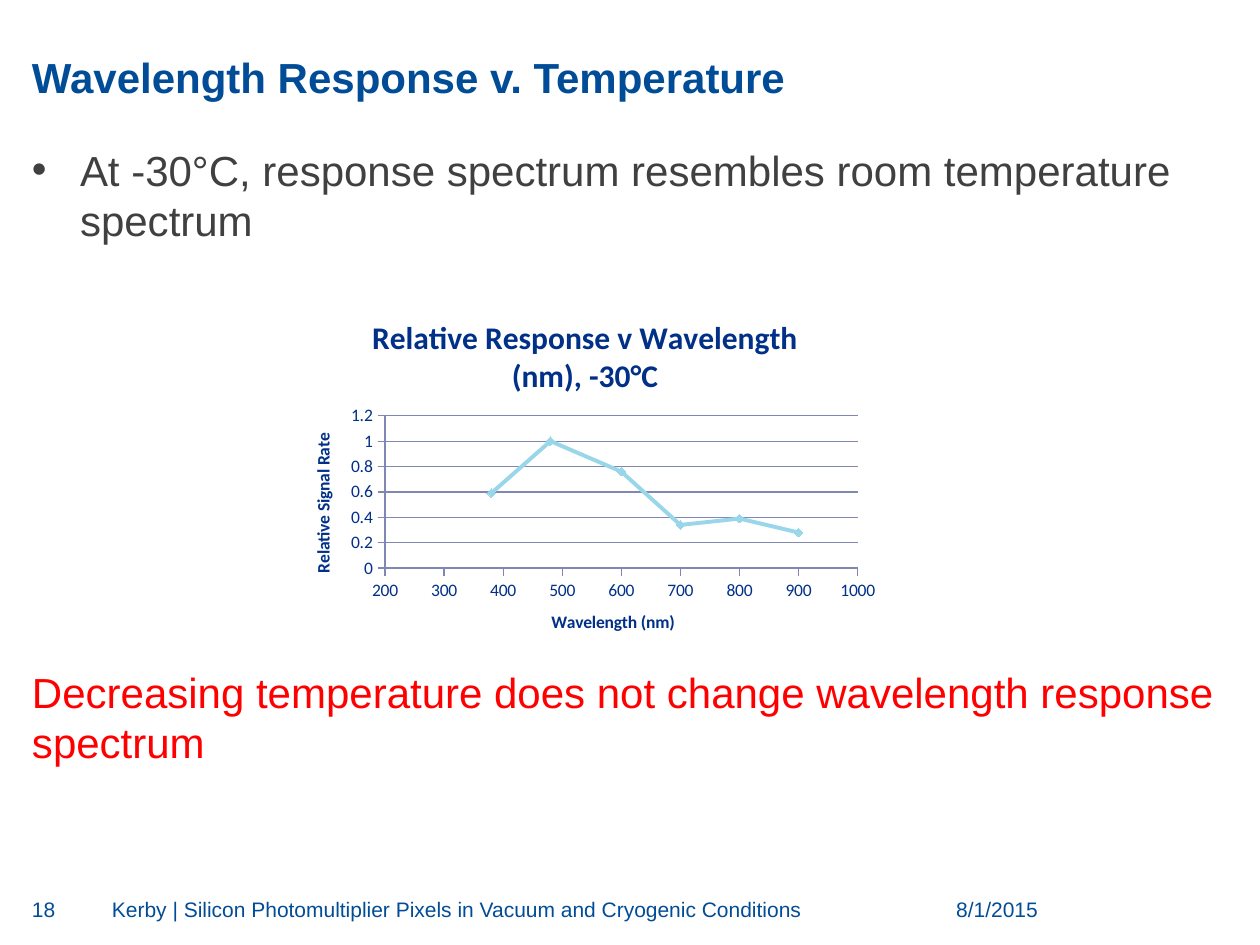
from lxml import etree
from pptx import Presentation
from pptx.chart.data import XyChartData
from pptx.dml.color import RGBColor
from pptx.enum.chart import XL_CHART_TYPE as CT, XL_MARKER_STYLE as MS, XL_TICK_MARK as TM
from pptx.enum.text import MSO_ANCHOR as ANCHOR, MSO_AUTO_SIZE as AUTO, PP_ALIGN as ALIGN
from pptx.oxml import parse_xml
from pptx.oxml.ns import nsdecls, qn
from pptx.util import Pt

PX = 914400 / 126
BLUE, NAVY, GRAY, RED = "004C97", "003087", "404040", "FF0000"
GRID, LINE = "7F87B2", "99D6EA"


def px(n):
    return round(n * PX)


def rgb(h):
    return RGBColor.from_string(h)


def place(sp, box):
    sp.left, sp.top, sp.width, sp.height = map(px, box)


def set_font(font, size, color, bold=False, name="Arial"):
    font.name, font.size, font.bold = name, Pt(size), bold
    font.color.rgb = rgb(color)


def set_frame(sp, anchor=ANCHOR.TOP):
    tf = sp.text_frame
    tf.margin_left = tf.margin_top = tf.margin_right = tf.margin_bottom = 0
    tf.word_wrap, tf.auto_size, tf.vertical_anchor = True, AUTO.NONE, anchor
    return tf


def add_run(p, text, size, color, bold=False):
    r = p.add_run()
    r.text = text
    set_font(r.font, size, color, bold)


def set_bullet(p, indent, char=None):
    pPr = p._p.get_or_add_pPr()
    pPr.set("marL", str(px(indent)))
    pPr.set("indent", str(-px(indent)))
    if char:
        etree.SubElement(pPr, qn("a:buFont")).set("typeface", "Arial")
        etree.SubElement(pPr, qn("a:buChar")).set("char", char)
    else:
        etree.SubElement(pPr, qn("a:buNone"))


def fill_title(sp, box):
    place(sp, box)
    p = set_frame(sp, ANCHOR.BOTTOM).paragraphs[0]
    p.alignment = ALIGN.LEFT
    add_run(p, "Wavelength Response v. Temperature", 24, BLUE, True)


def fill_body(sp, box):
    place(sp, box)
    tf = set_frame(sp)
    p = tf.paragraphs[0]
    p.space_before = Pt(0)
    set_bullet(p, 48, "•")
    add_run(p, "At -30°C, response spectrum resembles room temperature spectrum", 24, GRAY)

    # Conclusion, spaced to clear the chart
    p = tf.add_paragraph()
    p.space_before = Pt(241)
    set_bullet(p, 0)
    add_run(p, "Decreasing temperature does not change wavelength response spectrum", 24, RED)


def chart_title(owner, text, size):
    p = (owner.chart_title if hasattr(owner, "chart_title") else owner.axis_title).text_frame.paragraphs[0]
    r = p.add_run()
    r.text = text
    set_font(r.font, size, NAVY, True, "Calibri")


def style_axis(axis, title, low, high, step):
    axis.minimum_scale, axis.maximum_scale, axis.major_unit = low, high, step
    axis.major_tick_mark, axis.minor_tick_mark = TM.OUTSIDE, TM.NONE
    axis.format.line.color.rgb = rgb(GRID)
    axis.format.line.width = Pt(0.75)
    axis.tick_labels.number_format = "General"
    axis.tick_labels.number_format_is_linked = False
    chart_title(axis, title, 10)


def add_response_chart(slide, box):
    data = XyChartData()
    points = data.add_series("Series 1")
    for x, y in [(380, 0.59), (480, 1), (600, 0.76), (700, 0.34), (800, 0.39), (900, 0.28)]:
        points.add_data_point(x, y)
    chart = slide.shapes.add_chart(CT.XY_SCATTER_LINES, *map(px, box), data).chart
    set_font(chart.font, 10, NAVY, name="Calibri")
    chart.has_legend = False
    chart_title(chart, "Relative Response v Wavelength (nm), -30°C", 18)

    # Axes
    style_axis(chart.category_axis, "Wavelength (nm)", 200, 1000, 100)
    style_axis(chart.value_axis, "Relative Signal Rate", 0, 1.2, 0.2)
    chart.category_axis.has_major_gridlines = False
    chart.value_axis.has_major_gridlines = True
    grid = chart.value_axis.major_gridlines.format.line
    grid.color.rgb, grid.width = rgb(GRID), Pt(0.75)

    # Series
    plot = chart.plots[0]
    plot.vary_by_categories = False
    ser = plot.series[0]
    ser.smooth = False
    ser.format.line.color.rgb = rgb(LINE)
    ser.format.line.width = Pt(2.25)
    ser.marker.style, ser.marker.size = MS.DIAMOND, 5
    ser.marker.format.fill.solid()
    ser.marker.format.fill.fore_color.rgb = rgb(LINE)
    ser.marker.format.line.color.rgb = rgb(LINE)

    # Inner plot area, as fractions of the chart
    area = chart._chartSpace.chart.plotArea
    for old in area.findall(qn("c:layout")):
        area.remove(old)
    parts = [("layoutTarget", "inner"), ("xMode", "edge"), ("yMode", "edge"),
             ("x", 0.17), ("y", 0.33), ("w", 0.78), ("h", 0.42)]
    inner = "".join(f'<c:{tag} val="{val}"/>' for tag, val in parts)
    area.insert(0, parse_xml(
        f'<c:layout {nsdecls("c")}><c:manualLayout>{inner}</c:manualLayout></c:layout>'))


def add_footer(slide, left, top, height):
    items = [(0, 62, "18", ALIGN.LEFT),
             (80, 741, "Kerby | Silicon Photomultiplier Pixels in Vacuum and Cryogenic Conditions", ALIGN.LEFT),
             (857, 149, "8/1/2015", ALIGN.RIGHT)]
    for dx, width, text, align in items:
        sp = slide.shapes.add_textbox(*map(px, (left + dx, top, width, height)))
        p = set_frame(sp).paragraphs[0]
        p.alignment = align
        add_run(p, text, 12, BLUE)


def main():
    prs = Presentation()
    prs.slide_width, prs.slide_height = px(1260), px(945)
    s = prs.slides.add_slide(prs.slide_layouts[1])
    fill_title(s.shapes.title, (32, 14, 1197, 88))
    fill_body(s.placeholders[1], (32, 144, 1194, 687))
    add_footer(s, 32, 897, 33)
    add_response_chart(s, (282, 296, 606, 363))
    prs.save("out.pptx")


if __name__ == "__main__":
    main()
